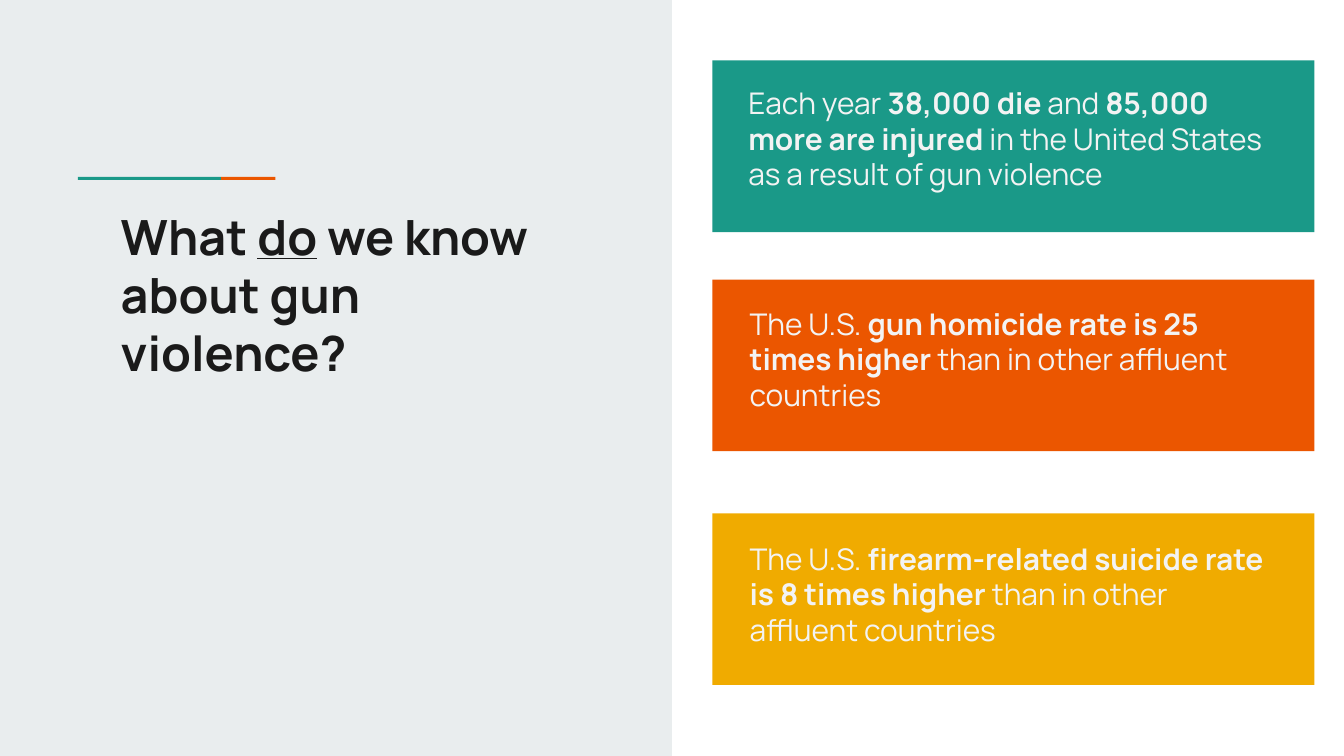
from dataclasses import dataclass

from pptx import Presentation
from pptx.dml.color import RGBColor
from pptx.enum.shapes import MSO_SHAPE
from pptx.slide import Slide
from pptx.util import Inches, Pt

WIDE, HIGH = Inches(10), Inches(5.625)


@dataclass(frozen=True)
class Theme:
    font: str = "Manrope"
    title: int = 26
    body: int = 16
    ink: str = "1A1A1A"
    light: str = "F3F3F3"
    side: str = "E9EDEE"
    teal: str = "1A9988"
    orange: str = "EB5600"
    gold: str = "F0AB00"


@dataclass(frozen=True)
class Box:
    """Place and size in percent of the slide's width and height."""
    left: float
    top: float
    width: float
    height: float

    def frame(self) -> tuple[int, int, int, int]:
        return (int(WIDE * self.left / 100), int(HIGH * self.top / 100),
                int(WIDE * self.width / 100), int(HIGH * self.height / 100))


@dataclass(frozen=True)
class Phrase:
    text: str
    bold: bool = False
    under: bool = False


@dataclass(frozen=True)
class Panel:
    top: float
    fill: str
    inset: tuple[float, float]
    words: tuple[Phrase, ...]


THEME = Theme()
TITLE = (Phrase("What ", True), Phrase("do", True, True),
         Phrase(" we know about gun violence?", True))
BARS = (
    (Box(0, 0, 50, 100), THEME.side),
    (Box(5.8, 23.4, 10.65, 0.4), THEME.teal),
    (Box(16.45, 23.4, 4.05, 0.4), THEME.orange),
)
PANELS = (
    Panel(8, THEME.teal, (1.7, 1.4), (
        Phrase("Each year "), Phrase("38,000 die", True), Phrase(" and "),
        Phrase("85,000 more are injured", True),
        Phrase(" in the United States as a result of gun violence"))),
    Panel(37, THEME.orange, (1.8, 1.6), (
        Phrase("The U.S. "),
        Phrase("gun homicide rate is 25 times higher ", True),
        Phrase("than in other affluent countries"))),
    Panel(67.9, THEME.gold, (1.8, 1.8), (
        Phrase("The U.S. "),
        Phrase("firearm-related suicide rate is 8 times higher ", True),
        Phrase("than in other affluent countries"))),
)


def draw_bar(slide: Slide, box: Box, fill: str) -> None:
    bar = slide.shapes.add_shape(MSO_SHAPE.RECTANGLE, *box.frame())
    bar.shadow.inherit = False
    bar.fill.solid()
    bar.fill.fore_color.rgb = RGBColor.from_string(fill)
    bar.line.fill.background()


def draw_text(slide: Slide, box: Box, words: tuple[Phrase, ...],
              size: int, color: str) -> None:
    frame = slide.shapes.add_textbox(*box.frame()).text_frame
    frame.word_wrap = True
    frame.margin_left = frame.margin_right = Inches(0.1)
    frame.margin_top = frame.margin_bottom = Inches(0.1)
    for phrase in words:
        run = frame.paragraphs[0].add_run()
        run.text = phrase.text
        font = run.font
        font.name, font.size = THEME.font, Pt(size)
        font.bold, font.underline = phrase.bold, phrase.under
        font.color.rgb = RGBColor.from_string(color)


def draw_panel(slide: Slide, panel: Panel) -> None:
    left = 53
    draw_bar(slide, Box(left, panel.top, 44.8, 22.7), panel.fill)
    right, down = panel.inset
    draw_text(slide, Box(left + right, panel.top + down, 41.3, 19.4),
              panel.words, THEME.body, THEME.light)


def main() -> None:
    deck = Presentation()
    deck.slide_width, deck.slide_height = WIDE, HIGH
    slide = deck.slides.add_slide(deck.slide_layouts[6])
    for box, fill in BARS:
        draw_bar(slide, box, fill)
    draw_text(slide, Box(8, 25.6, 36.1, 32.9), TITLE, THEME.title, THEME.ink)
    for panel in PANELS:
        draw_panel(slide, panel)
    deck.save("out.pptx")


if __name__ == "__main__":
    main()
